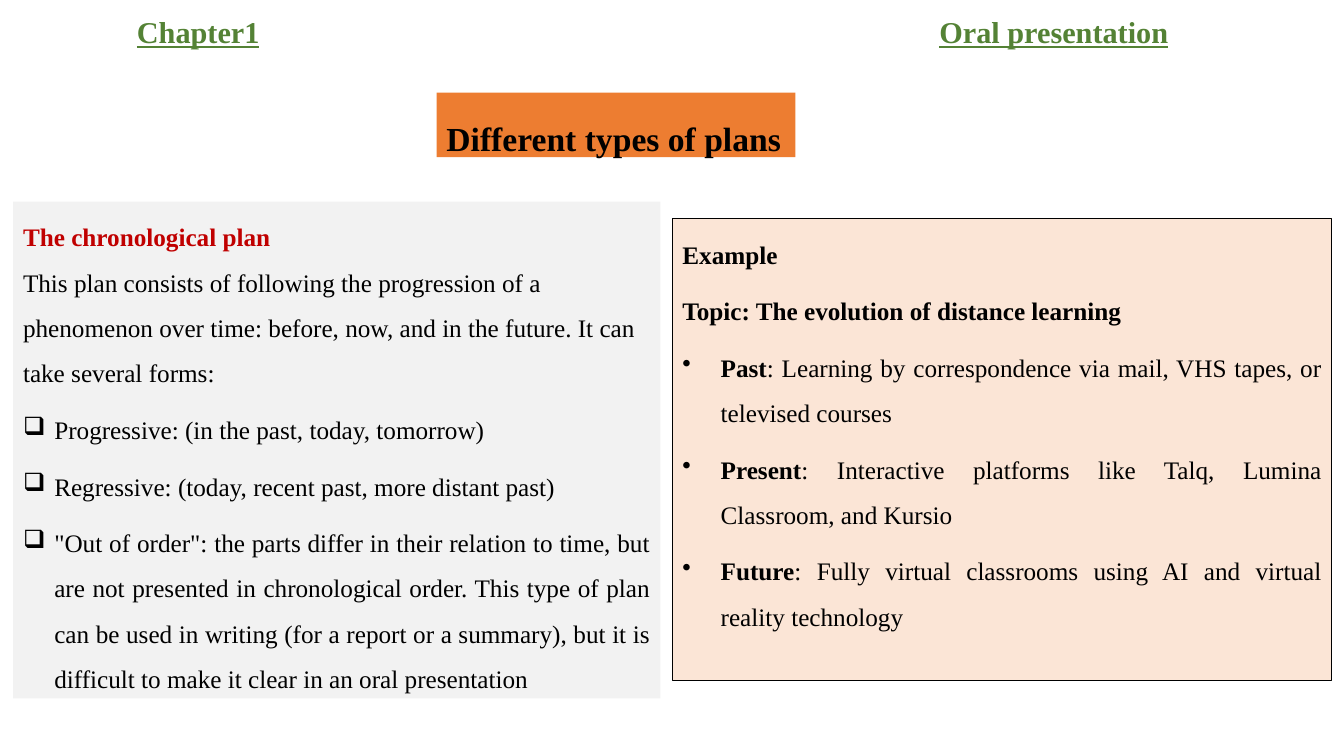
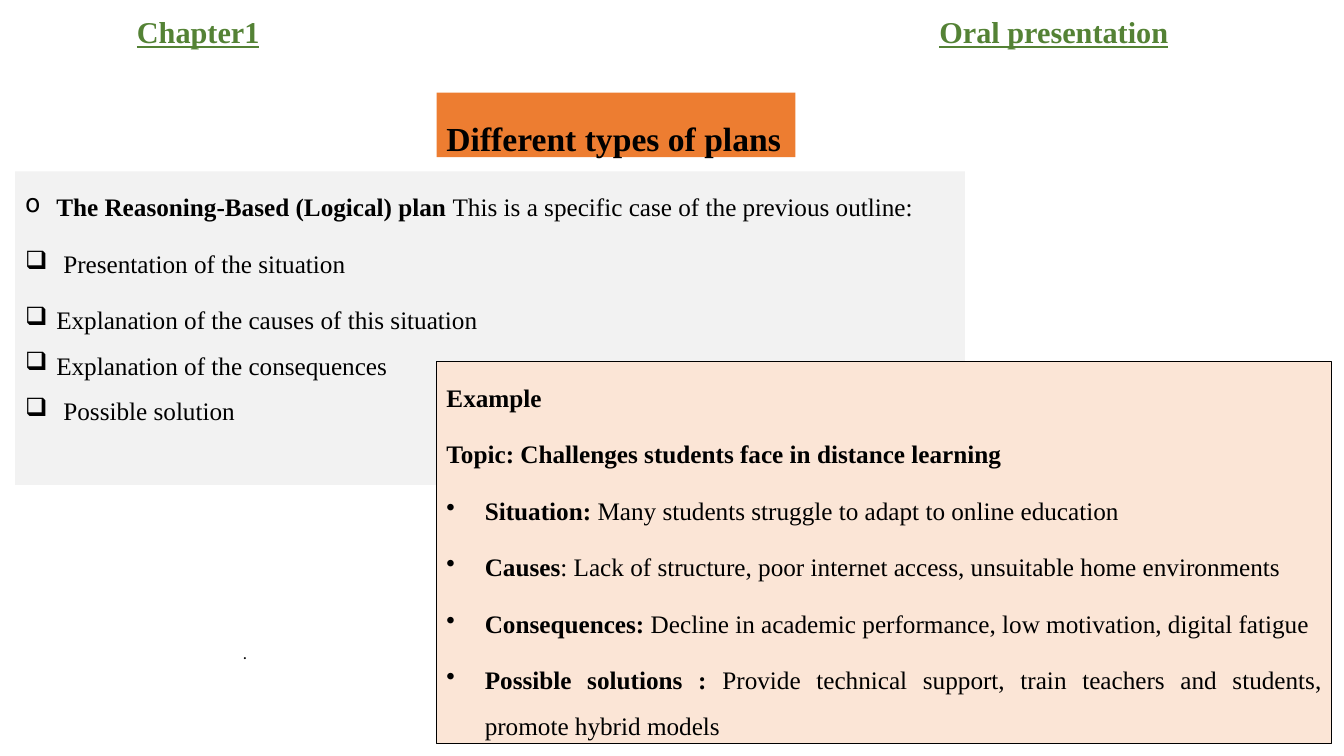
from lxml import etree
from pptx import Presentation
from pptx.dml.color import RGBColor
from pptx.enum.shapes import MSO_SHAPE
from pptx.enum.text import MSO_ANCHOR, PP_ALIGN
from pptx.oxml.ns import qn
from pptx.util import Inches, Pt

RECTANGLE = MSO_SHAPE.RECTANGLE
TOP, MIDDLE = MSO_ANCHOR.TOP, MSO_ANCHOR.MIDDLE
LEFT, JUSTIFY = PP_ALIGN.LEFT, PP_ALIGN.JUSTIFY

SERIF, SANS = "Times New Roman", "Calibri"
BLACK, RED, GREEN = "000000", "C00000", "548235"
ORANGE, GREY, PEACH = "ED7D31", "F2F2F2", "FBE5D6"
DOT, SQUARE, CIRCLE = "•", "❑", "o"
NARROW, WIDE = 0.31, 0.38


def rgb(value):
    return RGBColor.from_string(value)


class PlanDeck:
    """Holds the deck style and the slide being filled."""

    def __init__(self):
        self.deck = Presentation()
        self.deck.slide_width = Inches(13.33)
        self.deck.slide_height = Inches(7.5)
        self.page = None

    def add_page(self):
        self.page = self.deck.slides.add_slide(self.deck.slide_layouts[6])
        self.header("Chapter1", "Oral presentation")
        title = self.panel(4.33, 0.92, 3.56, 0.64, ORANGE)
        self.add_para(title, lead="Different types of plans", size=24)

    def frame(self, box, anchor):
        frame = box.text_frame
        frame.word_wrap = True
        frame.vertical_anchor = anchor
        return frame

    def text_box(self, left, top, width, height, anchor=TOP):
        box = self.page.shapes.add_textbox(
            Inches(left), Inches(top), Inches(width), Inches(height))
        return self.frame(box, anchor)

    def panel(self, left, top, width, height, fill, outlined=False):
        box = self.page.shapes.add_shape(
            RECTANGLE, Inches(left), Inches(top), Inches(width), Inches(height))
        box.shadow.inherit = False
        box.fill.solid()
        box.fill.fore_color.rgb = rgb(fill)
        if outlined:
            box.line.color.rgb = rgb(BLACK)
            box.line.width = Pt(0.75)
        else:
            box.line.fill.background()
        return self.frame(box, TOP)

    def header(self, chapter, subject):
        frame = self.text_box(1.26, 0.16, 10.7, 0.35, MIDDLE)
        para = self.add_para(frame, lead=f"{chapter}\t{subject}", size=21.6,
                             color=GREEN, spacing=0.9, after=0, align=LEFT)
        para.runs[0].font.underline = True
        props = para._p.get_or_add_pPr()
        stops = etree.SubElement(props, qn("a:tabLst"))
        etree.SubElement(stops, qn("a:tab"), pos=str(Inches(7.96)), algn="l")
        props.append(props.find(qn("a:defRPr")))

    def add_para(self, frame, text="", lead="", bullet="", indent=NARROW, size=18,
                 color=BLACK, font=SERIF, spacing=1.5, after=8, align=JUSTIFY):
        para = frame.paragraphs[0]
        if para.runs:
            para = frame.add_paragraph()
        para.alignment = align
        para.line_spacing = spacing
        para.space_after = Pt(after)
        if bullet:
            props = para._p.get_or_add_pPr()
            props.set("marL", str(Inches(indent)))
            props.set("indent", str(-Inches(indent)))
            etree.SubElement(props, qn("a:buChar"), char=bullet)
        para.font.name = font
        para.font.size = Pt(size)
        para.font.color.rgb = rgb(color)
        for words, bold in ((lead, True), (text, False)):
            if words:
                span = para.add_run()
                span.text = words
                span.font.bold = bold
        return para

    def example(self, left, top, width, height, topic, points):
        frame = self.panel(left, top, width, height, PEACH, outlined=True)
        self.add_para(frame, lead="Example")
        self.add_para(frame, lead=f"Topic: {topic}")
        for lead, text in points:
            self.add_para(frame, text, lead, DOT, WIDE)


def chronological_page(plans):
    plans.add_page()
    plan = plans.panel(0.13, 2, 6.42, 4.93, GREY)
    plans.add_para(plan, lead="The chronological plan", color=RED, after=0, align=LEFT)
    plans.add_para(plan, "This plan consists of following the progression of a phenomenon "
                   "over time: before, now, and in the future. It can take several forms:",
                   align=LEFT)
    for text, after in (
        ("Progressive: (in the past, today, tomorrow)", 8),
        ("Regressive: (today, recent past, more distant past)", 8),
        ('"Out of order": the parts differ in their relation to time, but are not '
         "presented in chronological order. This type of plan can be used in writing "
         "(for a report or a summary), but it is difficult to make it clear in an oral "
         "presentation", 0),
    ):
        plans.add_para(plan, text, bullet=SQUARE, after=after)
    plans.example(6.67, 2.17, 6.54, 4.58, "The evolution of distance learning", (
        ("Past", ": Learning by correspondence via mail, VHS tapes, or televised courses"),
        ("Present", ": Interactive platforms like Talq, Lumina Classroom, and Kursio"),
        ("Future", ": Fully virtual classrooms using AI and virtual reality technology"),
    ))


def reasoning_page(plans):
    plans.add_page()
    plan = plans.panel(0.15, 1.7, 9.42, 3.11, GREY)
    plans.add_para(plan, "This is a specific case of the previous outline:",
                   "The Reasoning-Based (Logical) plan ", CIRCLE)
    for text, indent, after in (
        ("Presentation of the situation", WIDE, 8),
        ("Explanation of the causes of this situation", NARROW, 0),
        ("Explanation of the consequences", NARROW, 0),
        ("Possible solution", WIDE, 8),
    ):
        plans.add_para(plan, text, bullet=SQUARE, indent=indent, after=after)
    mark = plans.text_box(2.31, 6.33, 0.4, 0.3)
    plans.add_para(mark, ".", size=12, font=SANS, spacing=1, after=0, align=LEFT)
    plans.example(4.33, 3.59, 8.88, 3.79, "Challenges students face in distance learning", (
        ("Situation:", " Many students struggle to adapt to online education"),
        ("Causes", ": Lack of structure, poor internet access, unsuitable home environments"),
        ("Consequences:", " Decline in academic performance, low motivation, digital fatigue"),
        ("Possible solutions : ", "Provide technical support, train teachers and students, "
         "promote hybrid models"),
    ))


def main():
    plans = PlanDeck()
    chronological_page(plans)
    reasoning_page(plans)
    plans.deck.save("out.pptx")


if __name__ == "__main__":
    main()
